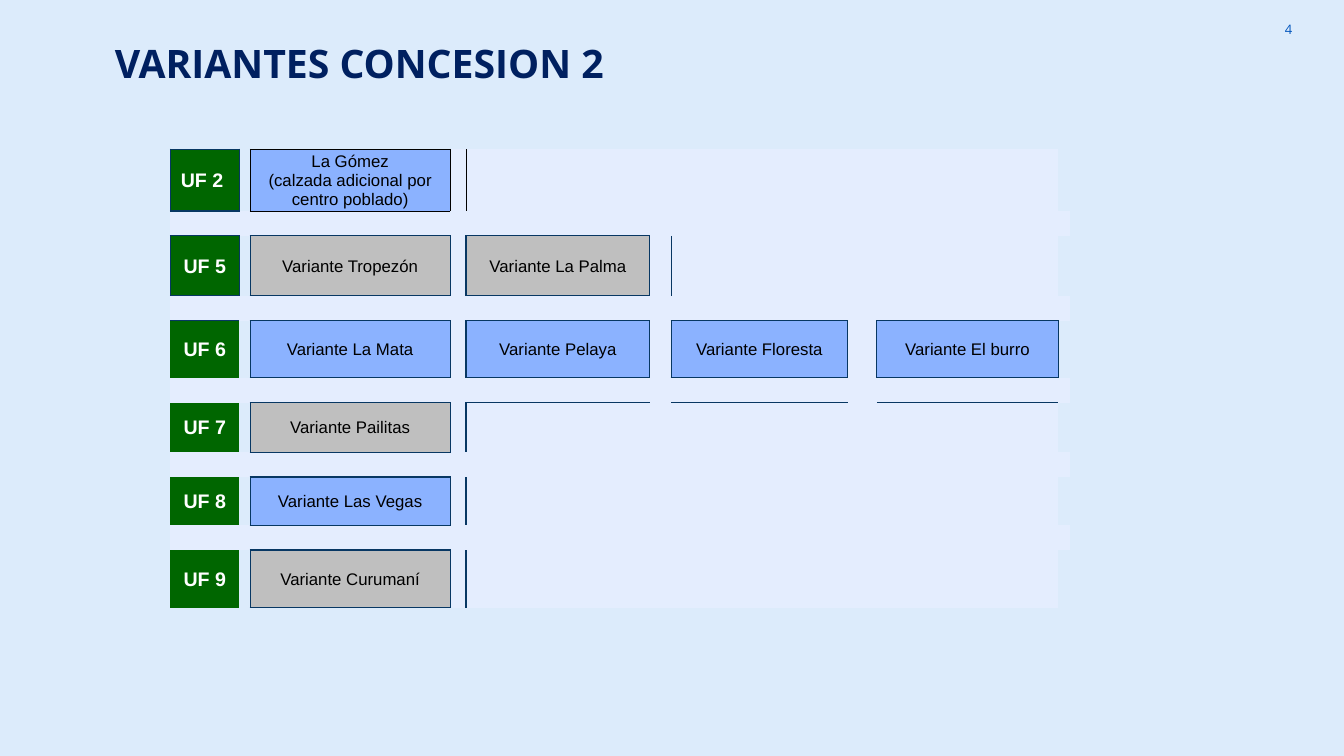
from collections import defaultdict
from dataclasses import dataclass
from typing import NamedTuple

from lxml.etree import SubElement as Sub
from pptx import Presentation
from pptx.dml.color import RGBColor as Color
from pptx.enum.text import MSO_ANCHOR as Anchor, MSO_AUTO_SIZE as Fit, PP_ALIGN as Align
from pptx.oxml.ns import qn
from pptx.util import Pt


@dataclass(frozen=True)
class Theme:
    back: str = "DCEBFB"
    panel: str = "E4EDFE"
    green: str = "006600"
    blue: str = "8BB2FF"
    gray: str = "BFBFBF"
    navy: str = "073763"
    black: str = "000000"
    white: str = "FFFFFF"
    title: str = "002060"
    number: str = "0054BC"
    head: str = "Open Sans"
    body: str = "Arial"
    big: float = 28
    label: float = 14
    small: float = 12
    page: float = 9.3
    blank: float = 8


class Edge(NamedTuple):
    color: str
    width: float


class Unit(NamedTuple):
    name: str
    tall: float
    fill: str
    items: tuple[str, ...]
    edge: Edge
    rim: Edge | None = None


T = Theme()
LINE = Edge(T.navy, 1)
THIN = Edge(T.black, 0.5)
UNITS = (
    Unit("UF 2 ", 44.25, T.blue,
         ("La Gómez\n(calzada adicional por centro poblado)",), THIN, LINE),
    Unit("UF 5", 42.8, T.gray, ("Variante Tropezón", "Variante La Palma"), LINE, LINE),
    Unit("UF 6", 40.9, T.blue, ("Variante La Mata", "Variante Pelaya",
                                "Variante Floresta", "Variante El burro"), LINE),
    Unit("UF 7", 35.4, T.gray, ("Variante Pailitas",), LINE),
    Unit("UF 8", 34.4, T.blue, ("Variante Las Vegas",), LINE),
    Unit("UF 9", 41.2, T.gray, ("Variante Curumaní",), LINE),
)
WIDTHS = (49.2, 7.9, 142.8, 11.3, 131.4, 15.2, 126.2, 20.7, 129.7, 8)
GAP = 17.75
SIDES = {"L": (0, -1, "R"), "R": (0, 1, "L"), "T": (-1, 0, "B"), "B": (1, 0, "T")}
NO_STYLE = "{2D5ABB26-0587-4C30-8999-92F81FD0307C}"


def put(frame, text: str, *, size: float, color: str, font: str = T.body,
        bold: bool = False, align=Align.LEFT) -> None:
    for i, line in enumerate(text.split("\n")):
        para = frame.add_paragraph() if i else frame.paragraphs[0]
        para.alignment = align
        if not line:
            Sub(para._p, qn("a:endParaRPr"), sz=str(int(size * 100)))
            continue
        run = para.add_run()
        run.text = line
        run.font.size = Pt(size)
        run.font.name = font
        run.font.bold = bold
        run.font.color.rgb = Color.from_string(color)


def add_box(slide, left: float, top: float, wide: float, tall: float):
    frame = slide.shapes.add_textbox(Pt(left), Pt(top), Pt(wide), Pt(tall)).text_frame
    frame.word_wrap = True
    return frame


def rule(cell, side: str, edge: Edge) -> None:
    line = Sub(cell._tc.get_or_add_tcPr(), qn("a:ln" + side), w=str(Pt(edge.width)))
    Sub(Sub(line, qn("a:solidFill")), qn("a:srgbClr"), val=edge.color)


def style(cell, fill: str | None, edges: dict[str, Edge]) -> None:
    for side in SIDES:
        if side in edges:
            rule(cell, side, edges[side])
    if fill:
        cell.fill.solid()
        cell.fill.fore_color.rgb = Color.from_string(fill)
    else:
        cell.fill.background()
    cell.margin_left = cell.margin_right = cell.margin_top = Pt(0.72)
    cell.margin_bottom = Pt(0)
    cell.vertical_anchor = Anchor.MIDDLE


def add_grid(slide, left: float, top: float) -> None:
    rows, cols = 2 * len(UNITS) - 1, len(WIDTHS)
    talls = [GAP if r % 2 else UNITS[r // 2].tall for r in range(rows)]
    grid = slide.shapes.add_table(rows, cols, Pt(left), Pt(top),
                                  Pt(sum(WIDTHS)), Pt(sum(talls))).table
    grid.first_row = grid.horz_banding = False
    grid._tbl.tblPr.find(qn("a:tableStyleId")).text = NO_STYLE
    for col, wide in zip(grid.columns, WIDTHS):
        col.width = Pt(wide)
    for row, tall in zip(grid.rows, talls):
        row.height = Pt(tall)

    fills = {(r, c): None if r % 2 == 0 and c in (1, cols - 1) else T.panel
             for r in range(rows) for c in range(cols)}
    edges = defaultdict(dict)
    texts = {}
    for i, unit in enumerate(UNITS):
        for j, text in enumerate((unit.name, *unit.items)):
            r, c = spot = 2 * i, 2 * j
            texts[spot] = text
            fills[spot] = unit.fill if j else T.green
            edge = unit.edge if j else unit.rim
            if edge:
                for side, (down, right, other) in SIDES.items():
                    edges[spot][side] = edge
                    edges[r + down, c + right][other] = edge

    for (r, c), fill in fills.items():
        cell = grid.cell(r, c)
        style(cell, fill, edges[r, c])
        text = texts.get((r, c), "")
        name = bool(text) and c == 0
        put(cell.text_frame, text, bold=name, align=Align.CENTER,
            color=T.white if name else T.black,
            size=T.label if name else T.small if text else T.blank)


def main() -> None:
    deck = Presentation()
    deck.slide_width, deck.slide_height = Pt(960), Pt(540)
    slide = deck.slides.add_slide(deck.slide_layouts[6])
    slide.background.fill.solid()
    slide.background.fill.fore_color.rgb = Color.from_string(T.back)

    page = add_box(slide, 874.8, 0.7, 57.6, 41)
    page.margin_left = page.margin_right = Pt(9.4)
    page.margin_top = page.margin_bottom = Pt(9.4)
    page.vertical_anchor = Anchor.MIDDLE
    put(page, "4", size=T.page, color=T.number, font=T.head, align=Align.RIGHT)

    title = add_box(slide, 74.9, 24.5, 459.4, 41)
    title.auto_size = Fit.SHAPE_TO_FIT_TEXT
    put(title, "VARIANTES CONCESION 2", size=T.big, color=T.title, font=T.head, bold=True)

    add_grid(slide, 121.7, 106.5)
    deck.save("out.pptx")


if __name__ == "__main__":
    main()
